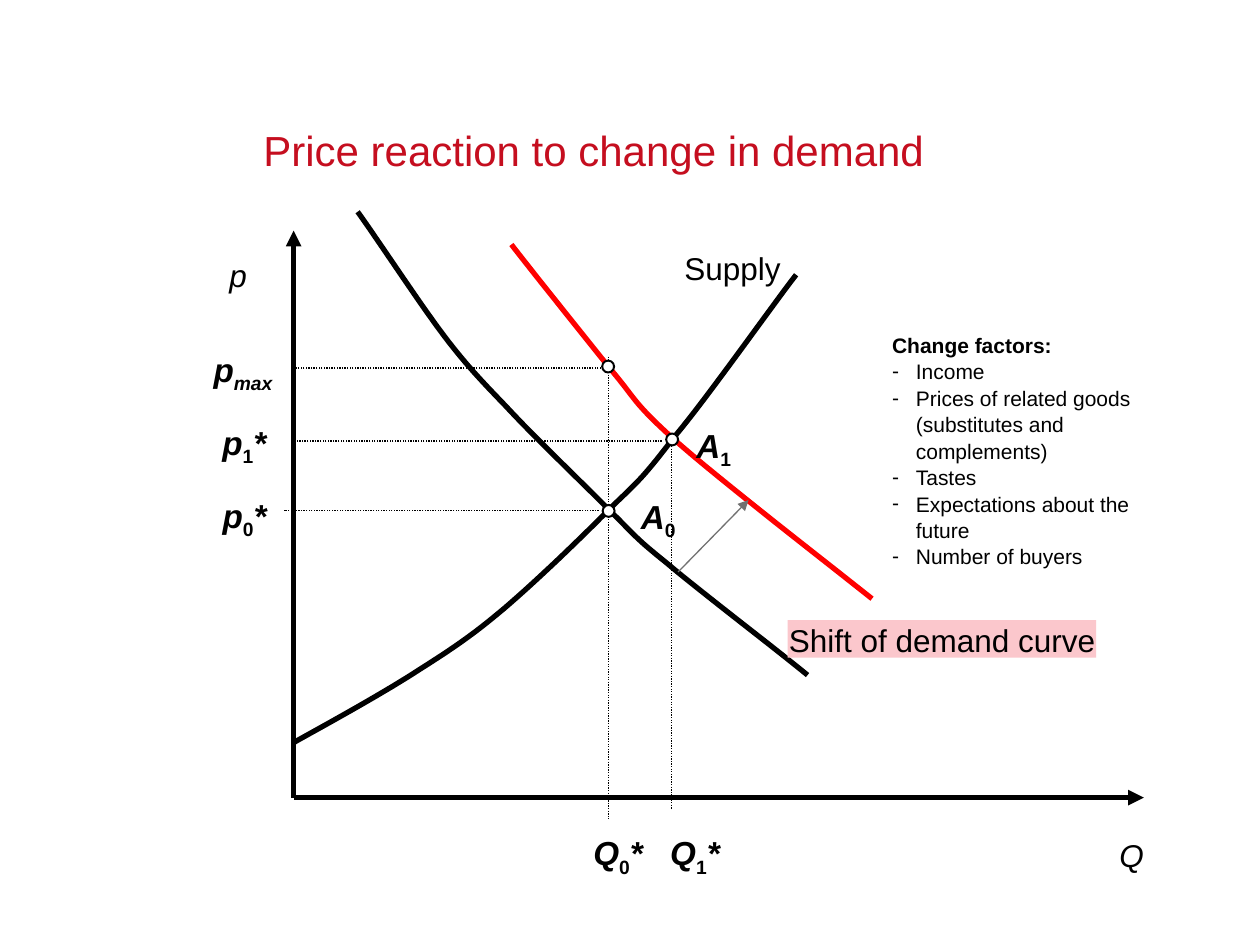
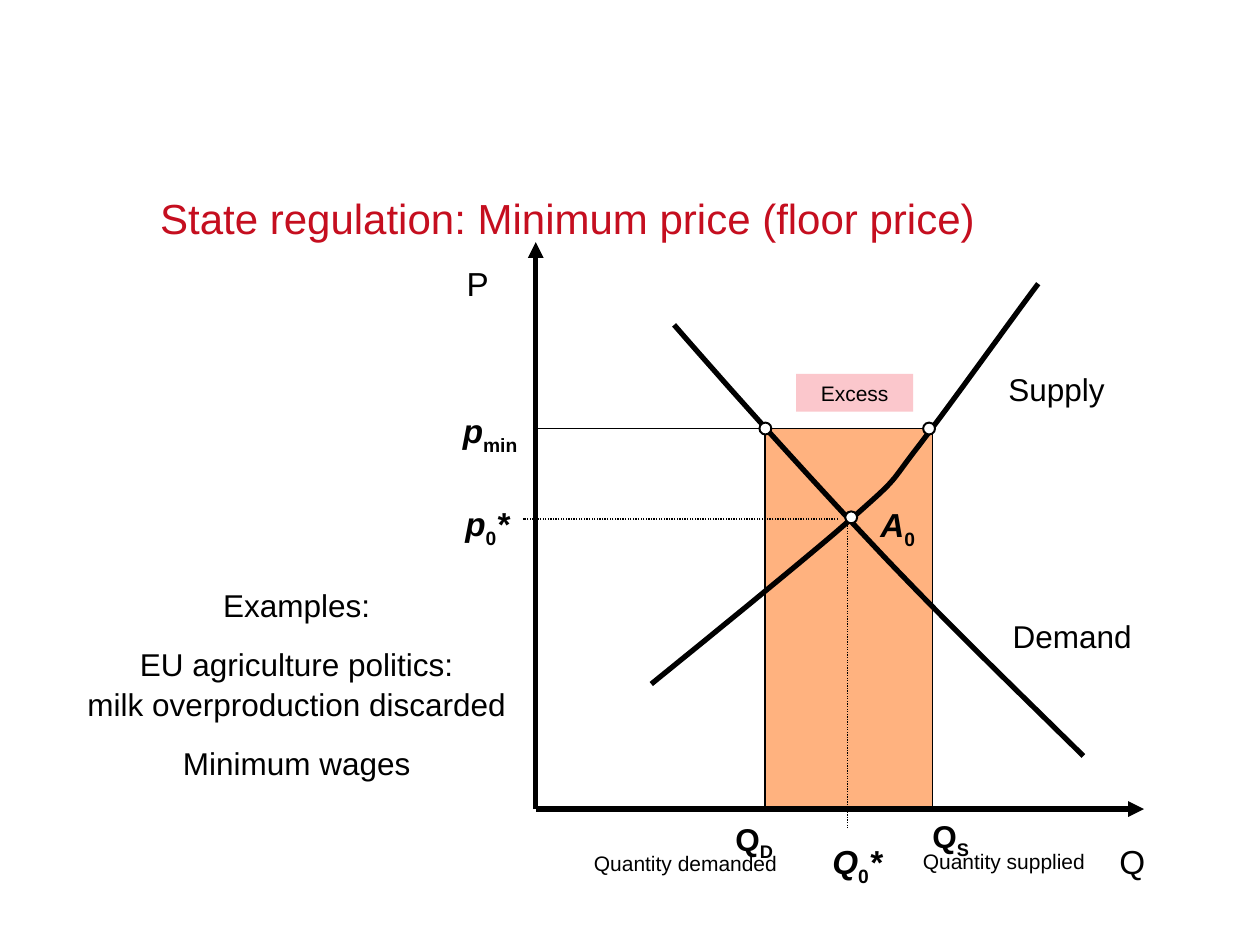
from dataclasses import dataclass
from itertools import chain
from lxml.etree import SubElement
from pptx import Presentation
from pptx.dml.color import RGBColor
from pptx.enum.dml import MSO_LINE as DASH
from pptx.enum.shapes import MSO_CONNECTOR as CONN, MSO_SHAPE as SHAPE
from pptx.enum.text import MSO_ANCHOR as ANCHOR, MSO_AUTO_SIZE as AUTO, PP_ALIGN as ALIGN
from pptx.oxml.ns import qn
from pptx.util import Cm, Pt

COLORS = {"title": "C50E1F", "ink": "000000", "paper": "FFFFFF", "shift": "FF0000",
          "pink": "FBC7CC", "excess": "FF6600", "arrow": "717171"}
FONT = "Arial"
SPACING = 1.05
DOT = 0.24
CURVE_STEPS = 16


@dataclass
class Label:
    left: float
    top: float
    width: float
    runs: tuple
    size: int = 19
    fill: str = ""


@dataclass
class Line:
    x1: float
    y1: float
    x2: float
    y2: float
    width: float = 0.75
    color: str = "ink"
    dotted: bool = False
    arrow: bool = False


@dataclass
class Curve:
    points: list
    color: str = "ink"


def rgb(name: str) -> RGBColor:
    return RGBColor.from_string(COLORS[name])


def symbol(letter: str, sub: str, tail: str = "", sub_style: str = "b_") -> tuple:
    return (letter, "bi"), (sub, sub_style), (tail, "bi")


def plain(text: str, style: str = "") -> tuple:
    return ((text, style),)


def style_run(r, size: int, style: str = "", color: str = "ink") -> None:
    font = r.font
    font.name, font.size = FONT, Pt(size)
    font.bold, font.italic = "b" in style, "i" in style
    font.color.rgb = rgb(color)
    if "_" in style:
        r._r.get_or_add_rPr().set("baseline", "-25000")


def clear_insets(tf) -> None:
    tf.margin_left = tf.margin_right = tf.margin_top = tf.margin_bottom = 0


def place(sp, left: float, top: float, width: float, height: float) -> None:
    sp.left, sp.top, sp.width, sp.height = Cm(left), Cm(top), Cm(width), Cm(height)


def set_title(slide, text: str, left: float, top: float) -> None:
    sp = slide.shapes.title
    place(sp, left, top, 18.62, 0.99)
    tf = sp.text_frame
    tf.text = text
    clear_insets(tf)
    tf.auto_size, tf.vertical_anchor = AUTO.NONE, ANCHOR.BOTTOM
    p = tf.paragraphs[0]
    p.alignment, p.line_spacing = ALIGN.LEFT, Pt(30)
    style_run(p.runs[0], 24, color="title")


def add_label(slide, label: Label) -> None:
    box = [Cm(v) for v in (label.left, label.top, label.width, 0.76)]
    if label.fill:
        sp = slide.shapes.add_shape(SHAPE.RECTANGLE, *box)
        sp.shadow.inherit = False
        sp.fill.solid()
        sp.fill.fore_color.rgb = rgb(label.fill)
        sp.line.fill.background()
    else:
        sp = slide.shapes.add_textbox(*box)
    tf = sp.text_frame
    clear_insets(tf)
    tf.word_wrap = False
    tf.vertical_anchor = ANCHOR.MIDDLE if label.fill else ANCHOR.TOP
    p = tf.paragraphs[0]
    p.alignment, p.line_spacing = ALIGN.CENTER, SPACING
    for text, style in label.runs:
        if text:
            r = p.add_run()
            r.text = text
            style_run(r, label.size, style)


def add_line(slide, line: Line) -> None:
    ends = [Cm(v) for v in (line.x1, line.y1, line.x2, line.y2)]
    sp = slide.shapes.add_connector(CONN.STRAIGHT, *ends)
    sp.line.width = Pt(line.width)
    sp.line.color.rgb = rgb(line.color)
    if line.dotted:
        sp.line.dash_style = DASH.ROUND_DOT
    if line.arrow:
        SubElement(sp.line._get_or_add_ln(), qn("a:tailEnd"), type="triangle")
    SubElement(sp._element.spPr, qn("a:effectLst"))


def add_axes(slide, x: float, y: float) -> None:
    add_line(slide, Line(x, y, 23.06, y, 3, arrow=True))
    add_line(slide, Line(x, y, x, y - 11.43, 3, arrow=True))


def bezier(knots: list, t: float) -> tuple:
    weights = ((1 - t) ** 3, 3 * t * (1 - t) ** 2, 3 * t * t * (1 - t), t ** 3)
    return tuple(Cm(sum(w * k[axis] for w, k in zip(weights, knots))) for axis in (0, 1))


def add_curve(slide, curve: Curve) -> None:
    pts = curve.points
    path = [bezier(pts[i:i + 4], step / CURVE_STEPS)
            for i in range(0, len(pts) - 1, 3) for step in range(1, CURVE_STEPS + 1)]
    builder = slide.shapes.build_freeform(*bezier(pts[:4], 0))
    builder.add_line_segments(path, close=False)
    sp = builder.convert_to_shape()
    sp.shadow.inherit = False
    sp.fill.background()
    sp.line.color.rgb = rgb(curve.color)
    sp.line.width = Pt(3)


def add_dot(slide, x: float, y: float) -> None:
    sp = slide.shapes.add_shape(SHAPE.OVAL, Cm(x - DOT / 2), Cm(y - DOT / 2), Cm(DOT), Cm(DOT))
    sp.shadow.inherit = False
    sp.fill.solid()
    sp.fill.fore_color.rgb = rgb("paper")
    sp.line.color.rgb = rgb("ink")
    sp.line.width = Pt(1.13)


def draw(slide, curves: list, lines: list, origin: tuple, dots: list, labels: list) -> None:
    for curve in curves:
        add_curve(slide, curve)
    for line in lines:
        add_line(slide, line)
    add_axes(slide, *origin)
    for dot in dots:
        add_dot(slide, *dot)
    for label in labels:
        add_label(slide, label)


def fill_factors(sp) -> None:
    place(sp, 17.73, 6.55, 5.46, 4.88)
    tf = sp.text_frame
    tf.text = "\n".join(["Change factors:", "Income",
                         "Prices of related goods (substitutes and complements)",
                         "Tastes", "Expectations about the future", "Number of buyers"])
    tf.auto_size = AUTO.NONE
    for i, p in enumerate(tf.paragraphs):
        indent = Cm(0.48) if i else 0
        pPr = p._p.get_or_add_pPr()
        pPr.set("marL", str(indent))
        pPr.set("indent", str(-indent))
        if i:
            SubElement(pPr, qn("a:buChar"), char="-")
        else:
            SubElement(pPr, qn("a:buNone"))
        p.space_before, p.line_spacing = Pt(0), SPACING
        style_run(p.runs[0], 12, "" if i else "b")


def add_examples(slide) -> None:
    tf = slide.shapes.add_textbox(Cm(1.47), Cm(11.66), Cm(9.02), Cm(4.11)).text_frame
    tf.word_wrap = False
    tf.text = "\n".join(["Examples:", "EU agriculture politics:",
                         "milk overproduction discarded", "Minimum wages"])
    for p, gap in zip(tf.paragraphs, (0, 11, 0, 11)):
        p.alignment, p.line_spacing, p.space_before = ALIGN.CENTER, SPACING, Pt(gap)
        style_run(p.runs[0], 18)


def add_excess_area(slide) -> None:
    sp = slide.shapes.add_shape(SHAPE.RECTANGLE, Cm(15.42), Cm(8.64), Cm(3.38), Cm(7.62))
    sp.shadow.inherit = False
    sp.fill.solid()
    sp.fill.fore_color.rgb = rgb("excess")
    color = next(sp._element.spPr.iter(qn("a:srgbClr")))
    SubElement(color, qn("a:alpha"), val="50000")
    sp.line.color.rgb = rgb("ink")
    sp.line.width = Pt(0.75)


def build_demand_change(prs) -> None:
    slide = prs.slides.add_slide(prs.slide_layouts[1])
    set_title(slide, "Price reaction to change in demand", 5.31, 2.54)
    demand = [(7.21, 4.27), (7.49, 4.65), (8.31, 5.89), (8.79, 6.55), (9.27, 7.21), (9.6, 7.57),
              (10.19, 8.18), (10.77, 8.81), (11.76, 9.75), (12.29, 10.29), (12.83, 10.82),
              (12.78, 10.82), (13.44, 11.35), (14.1, 11.91), (15.7, 13.13), (16.28, 13.61)]
    supply = [(5.94, 14.96), (6.35, 14.73), (7.65, 14.02), (8.36, 13.56), (9.07, 13.11),
              (9.5, 12.83), (10.16, 12.27), (10.82, 11.71), (11.76, 10.8), (12.34, 10.21),
              (12.93, 9.65), (13, 9.58), (13.61, 8.79), (14.25, 8.03), (15.54, 6.2), (16.05, 5.54)]
    shifted = [(10.31, 4.93), (10.64, 5.36), (11.76, 6.76), (12.29, 7.42), (12.85, 8.08),
               (12.73, 8.08), (13.59, 8.86), (14.48, 9.65), (16.74, 11.4), (17.58, 12.07)]
    guides = [(12.27, 7.19, 12.27, 16.51), (12.07, 10.29, 5.72, 10.29), (13.34, 8.89, 5.92, 8.89),
              (13.54, 8.89, 13.54, 16.31), (12.22, 7.42, 5.87, 7.42)]
    shift_arrow = Line(13.67, 11.53, 15.09, 10.08, color="arrow", arrow=True)
    labels = [Label(12.9, 9.96, 0.74, symbol("A", "0")),
              Label(14.02, 8.53, 0.74, symbol("A", "1")),
              Label(3.71, 5.13, 2.18, plain("p", "i"), 18),
              Label(22.56, 16.81, 0.51, plain("Q", "i"), 18),
              Label(11.94, 16.74, 1.04, symbol("Q", "0", "*")),
              Label(13.49, 16.74, 1.04, symbol("Q", "1", "*")),
              Label(4.42, 9.93, 1.02, symbol("p", "0", "*")),
              Label(4.47, 8.46, 0.91, symbol("p", "1", "*")),
              Label(4.24, 6.99, 1.32, symbol("p", "max", sub_style="bi_")),
              Label(15.88, 12.5, 6.22, plain("Shift of demand curve"), 18, "pink"),
              Label(13.79, 4.98, 1.96, plain("Supply"), 18)]
    draw(slide, [Curve(demand), Curve(supply), Curve(shifted, "shift")],
         list(chain((Line(*g, dotted=True) for g in guides), [shift_arrow])),
         (5.92, 16.08), [(13.55, 8.86), (12.26, 7.39), (12.27, 10.3)], labels)
    fill_factors(slide.placeholders[1])


def build_minimum_price(prs) -> None:
    slide = prs.slides.add_slide(prs.slide_layouts[5])
    set_title(slide, "State regulation: Minimum price (floor price)", 3.23, 3.91)
    add_excess_area(slide)
    demand = [(13.59, 6.55), (15.01, 8.18), (16.46, 9.78), (17.83, 11.23),
              (19.2, 12.67), (20.52, 13.94), (21.84, 15.24)]
    supply = [(13.13, 13.79), (13.82, 13.23), (16.33, 11.2), (17.22, 10.41), (18.14, 9.6),
              (17.91, 9.78), (18.52, 8.99), (19.13, 8.2), (20.42, 6.4), (20.93, 5.72)]
    lines = [Line(16.89, 10.46, 10.54, 10.46, dotted=True),
             Line(17.09, 10.54, 17.09, 16.69, dotted=True),
             Line(10.74, 8.64, 18.8, 8.64)]
    labels = [Label(17.73, 10.13, 0.74, symbol("A", "0")),
              Label(9.4, 5.26, 0.46, plain("P")),
              Label(22.56, 16.92, 0.53, plain("Q")),
              Label(16.76, 16.92, 1.04, symbol("Q", "0", "*")),
              Label(9.37, 10.11, 0.91, symbol("p", "0", "*")),
              Label(9.27, 8.23, 1.22, symbol("p", "min")),
              Label(20.32, 7.42, 1.96, plain("Supply"), 18),
              Label(20.14, 12.4, 2.95, plain("Demand"), 18),
              Label(11.51, 17.12, 4.62, plain("Quantity demanded"), 12),
              Label(17.93, 17.09, 4.62, plain("Quantity supplied"), 12),
              Label(14.48, 16.48, 1.45, (("Q", "b"), ("D", "b_")), 18),
              Label(18.39, 16.43, 1.55, (("Q", "b"), ("S", "b_")), 18),
              Label(16.05, 7.54, 2.36, plain("Excess"), 12, "pink")]
    draw(slide, [Curve(demand), Curve(supply)], lines, (10.8, 16.31),
         [(17.16, 10.43), (15.43, 8.64), (18.73, 8.64)], labels)
    add_examples(slide)


def main() -> None:
    """Build the two market diagrams and save them."""
    prs = Presentation()
    prs.slide_width, prs.slide_height = Cm(25.4), Cm(19.05)
    build_demand_change(prs)
    build_minimum_price(prs)
    prs.save("out.pptx")


if __name__ == "__main__":
    main()
